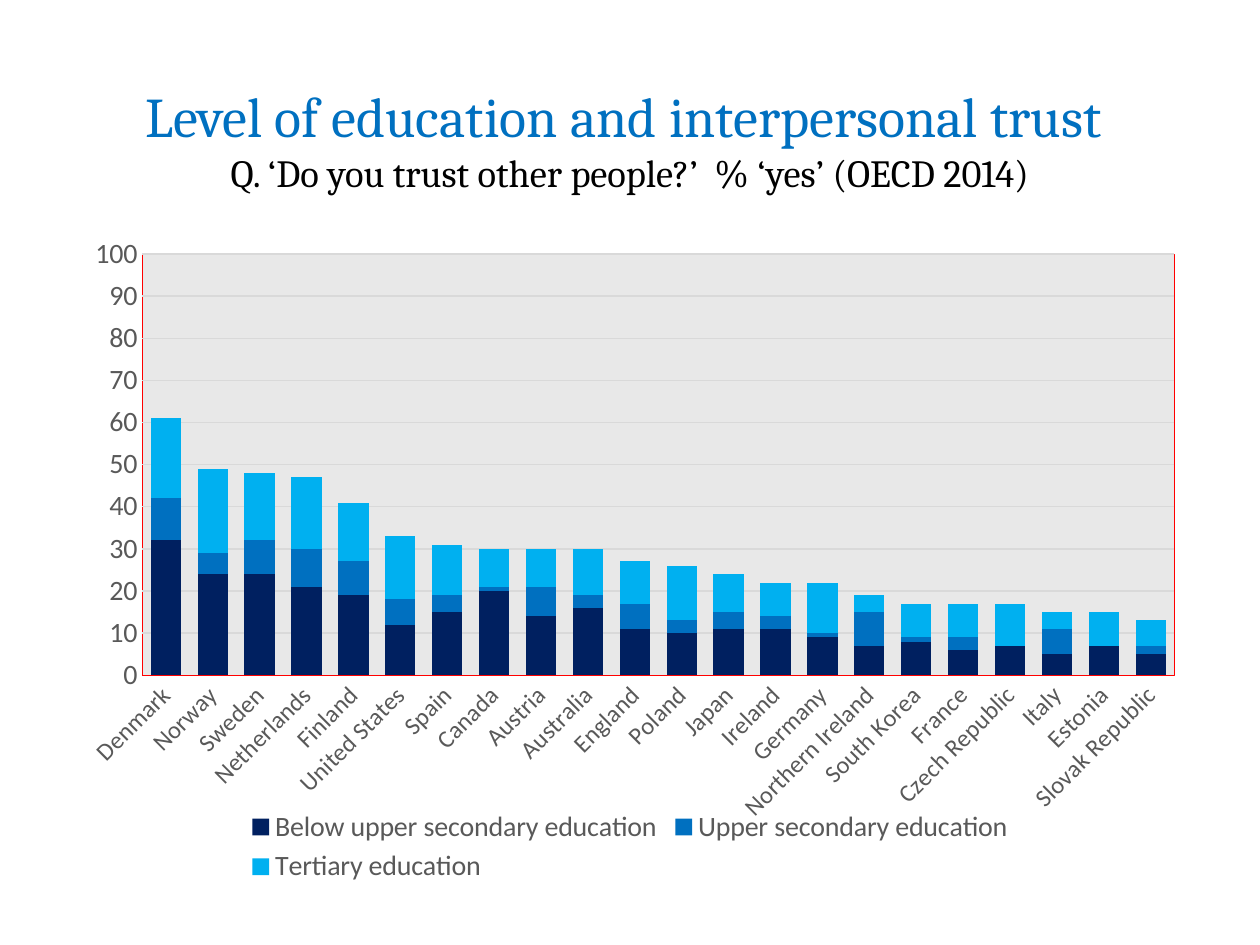
from dataclasses import dataclass

from lxml import etree
from pptx import Presentation
from pptx.chart.data import CategoryChartData
from pptx.dml.color import RGBColor
from pptx.enum.chart import XL_CHART_TYPE, XL_LEGEND_POSITION, XL_TICK_MARK
from pptx.enum.text import MSO_ANCHOR, PP_ALIGN
from pptx.oxml import parse_xml
from pptx.oxml.ns import nsdecls, qn
from pptx.util import Inches, Pt

STACKED = XL_CHART_TYPE.COLUMN_STACKED
BOTTOM = XL_LEGEND_POSITION.BOTTOM
NO_TICK = XL_TICK_MARK.NONE
MIDDLE = MSO_ANCHOR.MIDDLE
CENTER = PP_ALIGN.CENTER


@dataclass(frozen=True)
class Theme:
    heading_font: str = "Cambria"
    body_font: str = "Calibri"
    heading: str = "0070C0"
    question: str = "000000"
    label: str = "595959"
    grid: str = "D9D9D9"
    plot: str = "D9D9D9"
    frame: str = "FF0000"
    levels: tuple = ("002060", "0070C0", "00B0F0")
    heading_size: int = 32
    question_size: int = 22
    label_size: int = 16
    country_size: int = 14
    base_size: int = 10


THEME = Theme()

HEADING = "Level of education and interpersonal trust "
QUESTION = "Q. ‘Do you trust other people?’  % ‘yes’ (OECD 2014)"

LEVELS = (
    "Below upper secondary education",
    "Upper secondary education",
    "Tertiary education",
)
# Country, then one value for each level of education
TRUST = (
    ("Denmark", 32, 10, 19),
    ("Norway", 24, 5, 20),
    ("Sweden", 24, 8, 16),
    ("Netherlands", 21, 9, 17),
    ("Finland", 19, 8, 14),
    ("United States", 12, 6, 15),
    ("Spain", 15, 4, 12),
    ("Canada", 20, 1, 9),
    ("Austria", 14, 7, 9),
    ("Australia", 16, 3, 11),
    ("England", 11, 6, 10),
    ("Poland", 10, 3, 13),
    ("Japan", 11, 4, 9),
    ("Ireland", 11, 3, 8),
    ("Germany", 9, 1, 12),
    ("Northern Ireland", 7, 8, 4),
    ("South Korea", 8, 1, 8),
    ("France", 6, 3, 8),
    ("Czech Republic", 7, None, 10),
    ("Italy", 5, 6, 4),
    ("Estonia", 7, 0, 8),
    ("Slovak Republic", 5, 2, 6),
)


def set_font(font, name, size, color):
    font.name = name
    font.size = Pt(size)
    font.color.rgb = RGBColor.from_string(color)


def set_line(line, color, width):
    line.color.rgb = RGBColor.from_string(color)
    line.width = Pt(width)


def place_title(slide, left, top, width, height):
    title = slide.shapes.title
    title.left, title.top, title.width, title.height = left, top, width, height
    frame = title.text_frame
    frame.vertical_anchor = MIDDLE
    paragraph = frame.paragraphs[0]
    paragraph.text = f"{HEADING}\v{QUESTION}"
    paragraph.alignment = CENTER
    heading, question = paragraph.runs
    set_font(heading.font, THEME.heading_font, THEME.heading_size, THEME.heading)
    set_font(question.font, THEME.heading_font, THEME.question_size, THEME.question)


def format_plot_area(chart, **layout):
    """Fix the inner plot area, as shares of the chart, and give it a fill and frame."""
    plot_area = chart.plots[0]._element.getparent()
    for old_layout in plot_area.findall(qn("c:layout")):
        plot_area.remove(old_layout)
    new_layout = parse_xml(
        f'<c:layout {nsdecls("c")}><c:manualLayout><c:layoutTarget val="inner"/>'
        '<c:xMode val="edge"/><c:yMode val="edge"/></c:manualLayout></c:layout>'
    )
    for key, share in layout.items():
        etree.SubElement(new_layout[0], qn(f"c:{key}")).set("val", str(share))
    plot_area.insert(0, new_layout)
    plot_area.append(parse_xml(
        f'<c:spPr {nsdecls("c", "a")}>'
        f'<a:solidFill><a:srgbClr val="{THEME.plot}"><a:alpha val="60000"/></a:srgbClr></a:solidFill>'
        f'<a:ln w="{Pt(0.25)}"><a:solidFill><a:srgbClr val="{THEME.frame}"/></a:solidFill></a:ln>'
        '</c:spPr>'
    ))


def place_trust_chart(slide, left, top, width, height):
    countries, *level_values = zip(*TRUST)
    data = CategoryChartData()
    data.categories = countries
    for level, values in zip(LEVELS, level_values):
        data.add_series(level, values)
    chart = slide.shapes.add_chart(STACKED, left, top, width, height, data).chart
    chart.has_title = False
    set_font(chart.font, THEME.body_font, THEME.base_size, THEME.question)

    # Columns
    columns = chart.plots[0]
    columns.gap_width, columns.overlap = 55, 100
    columns.vary_by_categories = False
    for series, color in zip(columns.series, THEME.levels):
        series.invert_if_negative = False
        series.format.fill.solid()
        series.format.fill.fore_color.rgb = RGBColor.from_string(color)
    format_plot_area(chart, x=0.07, y=0.05, w=0.91, h=0.63)

    # Country axis, with slanted labels
    country_axis = chart.category_axis
    country_axis.major_tick_mark = country_axis.minor_tick_mark = NO_TICK
    set_line(country_axis.format.line, THEME.frame, 0.25)
    set_font(country_axis.tick_labels.font, THEME.body_font, THEME.country_size, THEME.label)
    label_body = country_axis._element.find(qn("c:txPr")).find(qn("a:bodyPr"))
    label_body.set("rot", str(-45 * 60000))
    label_body.set("vert", "horz")

    # Percentage axis
    percent_axis = chart.value_axis
    percent_axis.minimum_scale, percent_axis.maximum_scale = 0, 100
    percent_axis.major_unit = 10
    percent_axis.major_tick_mark = percent_axis.minor_tick_mark = NO_TICK
    percent_axis.format.line.fill.background()
    set_line(percent_axis.major_gridlines.format.line, THEME.grid, 0.75)
    set_font(percent_axis.tick_labels.font, THEME.body_font, THEME.label_size, THEME.label)

    # Legend
    chart.has_legend = True
    chart.legend.position = BOTTOM
    chart.legend.include_in_layout = False
    set_font(chart.legend.font, THEME.body_font, THEME.label_size, THEME.label)


def main():
    deck = Presentation()
    deck.slide_width, deck.slide_height = Inches(10), Inches(7.5)
    slide = deck.slides.add_slide(deck.slide_layouts.get_by_name("Title Only"))
    place_title(slide, Inches(0.5), Inches(0.3), Inches(9), Inches(1.6))
    place_trust_chart(slide, Inches(0.5), Inches(1.75), Inches(9), Inches(5.31))
    deck.save("out.pptx")


if __name__ == "__main__":
    main()
